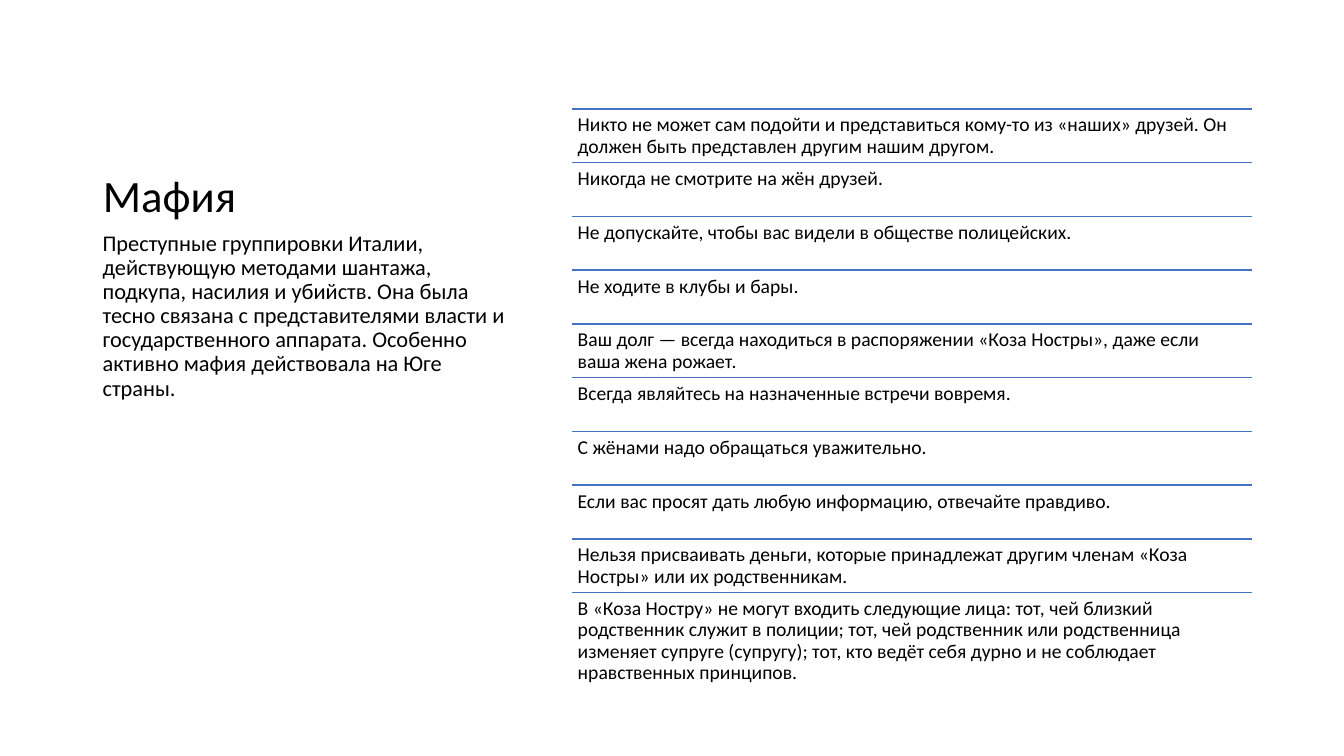
"""Build a slide on the mafia with its ten ruled commandments."""
from dataclasses import dataclass

import pptx
import pptx.dml.color
import pptx.enum.shapes
import pptx.enum.text
import pptx.oxml.ns
import pptx.util
from lxml import etree
from pptx.util import Inches


@dataclass(frozen=True)
class Theme:
    font: str = "Calibri"
    ink: str = "000000"
    rule: str = "4472C4"
    title_size: int = 32
    summary_size: int = 16
    commandment_size: int = 14
    rule_width: int = 1


THEME = Theme()
TITLE = "Мафия"
SUMMARY = (
    "Преступные группировки Италии, действующую методами шантажа, подкупа, насилия и убийств. "
    "Она была тесно связана с представителями власти и государственного аппарата. "
    "Особенно активно мафия действовала на Юге страны."
)
COMMANDMENTS = [
    "Никто не может сам подойти и представиться кому-то из «наших» друзей. "
    "Он должен быть представлен другим нашим другом.",
    "Никогда не смотрите на жён друзей.",
    "Не допускайте, чтобы вас видели в обществе полицейских.",
    "Не ходите в клубы и бары.",
    "Ваш долг — всегда находиться в распоряжении «Коза Ностры», даже если ваша жена рожает.",
    "Всегда являйтесь на назначенные встречи вовремя.",
    "С жёнами надо обращаться уважительно.",
    "Если вас просят дать любую информацию, отвечайте правдиво.",
    "Нельзя присваивать деньги, которые принадлежат другим членам «Коза Ностры» или их родственникам.",
    "В «Коза Ностру» не могут входить следующие лица: тот, чей близкий родственник служит в полиции; "
    "тот, чей родственник или родственница изменяет супруге (супругу); "
    "тот, кто ведёт себя дурно и не соблюдает нравственных принципов.",
]
LIST_LEFT, LIST_TOP, LIST_WIDTH = 5.67, 1.08, 6.75
ROW_HEIGHT = 4.8 / 9
ROW_INSET = 0.06


def fill_text(box, text, size, anchor=pptx.enum.text.MSO_ANCHOR.TOP):
    frame = box.text_frame
    frame.text = text
    frame.word_wrap = True
    frame.auto_size = pptx.enum.text.MSO_AUTO_SIZE.NONE
    frame.vertical_anchor = anchor
    para = frame.paragraphs[0]
    para.alignment = pptx.enum.text.PP_ALIGN.LEFT
    para.line_spacing = 0.9
    para.space_before = pptx.util.Pt(0)
    for span in para.runs:
        span.font.name = THEME.font
        span.font.size = pptx.util.Pt(size)
        span.font.color.rgb = pptx.dml.color.RGBColor.from_string(THEME.ink)


def add_title(page):
    title = page.shapes.title
    title.left, title.top = Inches(0.92), Inches(0.5)
    title.width, title.height = Inches(4.3), Inches(1.75)
    fill_text(title, TITLE, THEME.title_size, pptx.enum.text.MSO_ANCHOR.BOTTOM)


def add_text(page, text, size, left, top, width, height):
    box = page.shapes.add_textbox(Inches(left), Inches(top), Inches(width), Inches(height))
    fill_text(box, text, size)
    return box


def add_rule(page, top):
    rule = page.shapes.add_connector(
        pptx.enum.shapes.MSO_CONNECTOR.STRAIGHT,
        Inches(LIST_LEFT), Inches(top), Inches(LIST_LEFT + LIST_WIDTH), Inches(top),
    )
    rule.line.color.rgb = pptx.dml.color.RGBColor.from_string(THEME.rule)
    rule.line.width = pptx.util.Pt(THEME.rule_width)
    etree.SubElement(rule._element.spPr, pptx.oxml.ns.qn("a:effectLst"))


def add_commandment(page, text, top):
    add_rule(page, top)
    box = add_text(page, text, THEME.commandment_size, LIST_LEFT, top, LIST_WIDTH, ROW_HEIGHT)
    frame = box.text_frame
    frame.margin_left = frame.margin_right = Inches(ROW_INSET)
    frame.margin_top = frame.margin_bottom = Inches(ROW_INSET)


def main():
    deck = pptx.Presentation()
    deck.slide_width, deck.slide_height = Inches(13.33), Inches(7.5)
    page = deck.slides.add_slide(deck.slide_layouts[5])
    add_title(page)
    for row, text in enumerate(COMMANDMENTS):
        add_commandment(page, text, LIST_TOP + row * ROW_HEIGHT)
    add_text(page, SUMMARY, THEME.summary_size, 0.92, 2.25, 4.3, 4.17)
    deck.save("out.pptx")


if __name__ == "__main__":
    main()
